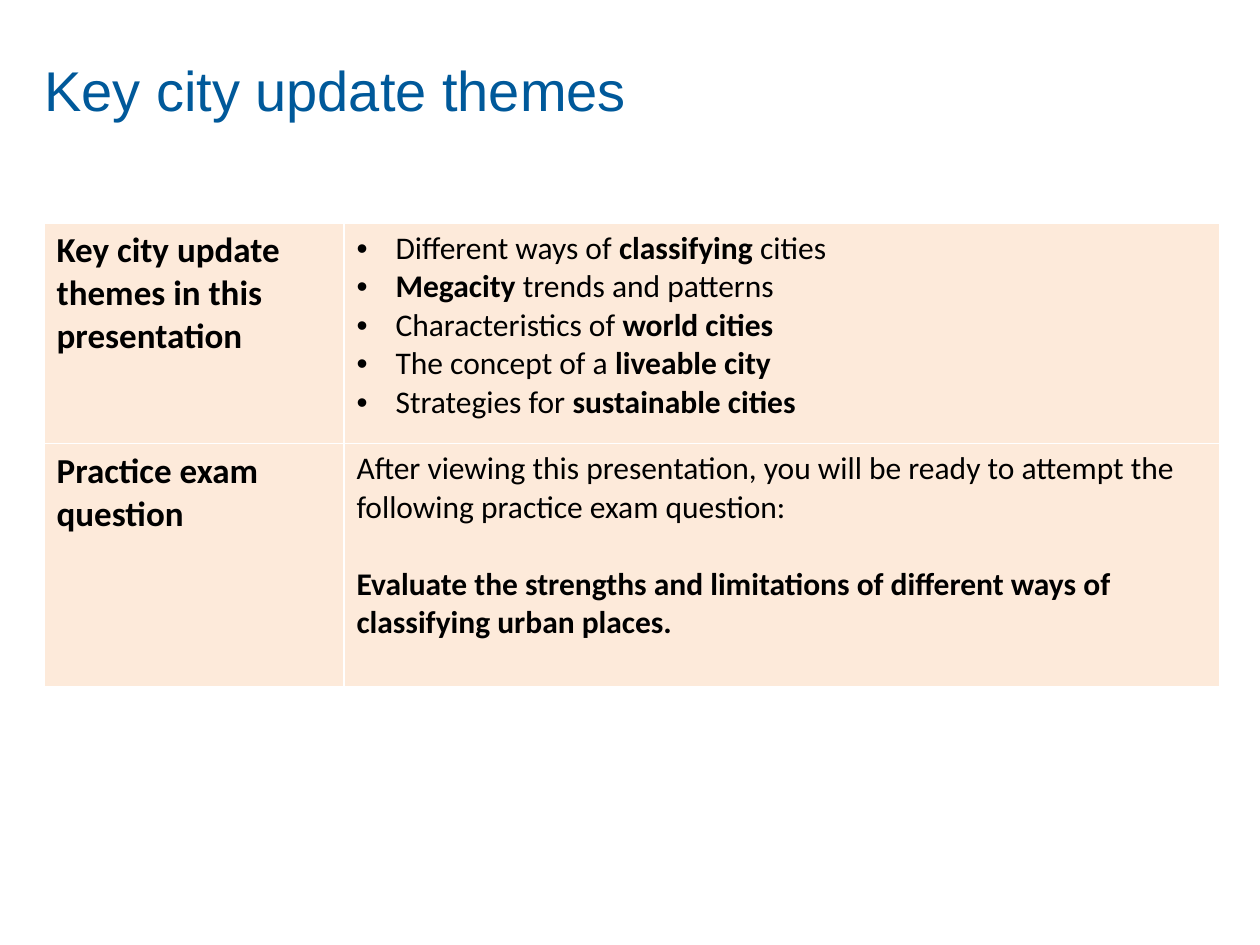
from dataclasses import dataclass

from lxml.etree import SubElement
from pptx import Presentation
from pptx.dml.color import RGBColor
from pptx.enum.text import MSO_ANCHOR
from pptx.oxml import parse_xml
from pptx.oxml.ns import nsdecls, qn
from pptx.table import _Cell
from pptx.text.text import TextFrame
from pptx.util import Inches, Pt

COLORS = {"title": "00599A", "text": "000000", "cell": "FDEADA", "rule": "FFFFFF"}


@dataclass
class Row:
    head: str
    lines: list[str]
    height: float
    bullet: bool = False
    gap: float = 0


ROWS = [
    Row("**Key city update themes in this presentation**", [
        "Different ways of **classifying** cities",
        "**Megacity** trends and patterns",
        "Characteristics of **world cities**",
        "The concept of a **liveable city**",
        "Strategies for **sustainable cities**",
    ], 1.75, bullet=True),
    Row("**Practice exam question**", [
        "After viewing this presentation, you will be ready to attempt "
        "the following practice exam question:",
        "**Evaluate the strengths and limitations of different ways of "
        "classifying urban places.**",
    ], 1.93, gap=22),
]
WIDTHS = [2.38, 6.95]


def write(frame: TextFrame, lines: list[str], *, size: float, font: str = "Calibri",
          color: str = "text", bullet: bool = False, gap: float = 0) -> None:
    """Write one paragraph per line; text between ** marks is bold."""
    frame.word_wrap = True
    for i, line in enumerate(lines):
        para = frame.add_paragraph() if i else frame.paragraphs[0]
        if bullet:
            props = para._p.get_or_add_pPr()
            props.set("marL", str(Inches(0.31)))
            props.set("indent", str(-Inches(0.31)))
            SubElement(props, qn("a:buFont"), typeface="Arial")
            SubElement(props, qn("a:buChar"), char="•")
        if i and gap:
            para.space_before = Pt(gap)
        for j, part in enumerate(line.split("**")):
            if part:
                run = para.add_run()
                run.text = part
                run.font.name = font
                run.font.size = Pt(size)
                run.font.bold = j % 2 == 1
                run.font.color.rgb = RGBColor.from_string(COLORS[color])


def paint(cell: _Cell) -> None:
    """Fill the cell and rule its four sides."""
    cell.fill.solid()
    cell.fill.fore_color.rgb = RGBColor.from_string(COLORS["cell"])
    props = cell._tc.get_or_add_tcPr()
    for i, side in enumerate("LRTB"):
        props.insert(i, parse_xml(
            f'<a:ln{side} {nsdecls("a")} w="{Pt(1)}"><a:solidFill>'
            f'<a:srgbClr val="{COLORS["rule"]}"/></a:solidFill></a:ln{side}>'))


def main() -> None:
    deck = Presentation()
    deck.slide_width, deck.slide_height = Inches(10), Inches(7.5)
    slide = deck.slides.add_slide(deck.slide_layouts[6])

    title = slide.shapes.add_textbox(
        Inches(0.35), Inches(0.3), Inches(6.25), Inches(1.3)).text_frame
    title.margin_left = title.margin_right = title.margin_bottom = 0
    title.margin_top = Inches(0.14)
    title.vertical_anchor = MSO_ANCHOR.TOP
    write(title, ["Key city update themes"], size=32, font="Arial", color="title")

    table = slide.shapes.add_table(
        len(ROWS), len(WIDTHS), Inches(0.35), Inches(1.77),
        Inches(sum(WIDTHS)), Inches(sum(row.height for row in ROWS))).table
    table.first_row = table.horz_banding = False
    for col, width in zip(table.columns, WIDTHS):
        col.width = Inches(width)
    for i, row in enumerate(ROWS):
        table.rows[i].height = Inches(row.height)
        head, body = table.cell(i, 0), table.cell(i, 1)
        write(head.text_frame, [row.head], size=20)
        write(body.text_frame, row.lines, size=18, bullet=row.bullet, gap=row.gap)
        paint(head)
        paint(body)

    deck.save("out.pptx")


if __name__ == "__main__":
    main()
